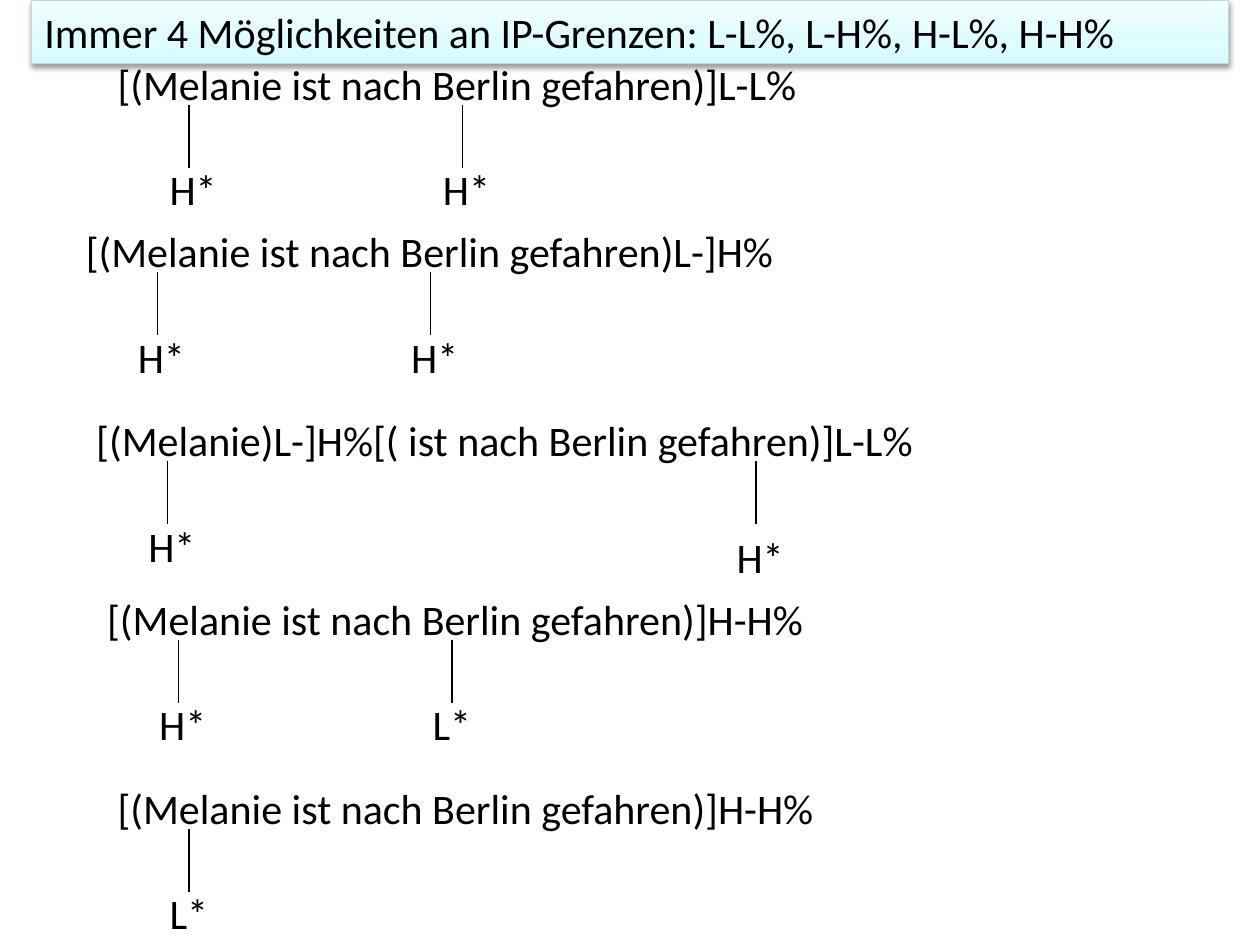
"""Build a slide on the boundary tones of German intonation phrases."""
from copy import deepcopy
from dataclasses import dataclass

from lxml import etree
from pptx import Presentation
from pptx.dml.color import RGBColor
from pptx.enum.shapes import MSO_CONNECTOR
from pptx.enum.text import MSO_ANCHOR, MSO_AUTO_SIZE, PP_ALIGN
from pptx.oxml import parse_xml
from pptx.oxml.ns import nsdecls, qn
from pptx.util import Cm, Pt

STRAIGHT = MSO_CONNECTOR.STRAIGHT
TOP = MSO_ANCHOR.TOP
GROW = MSO_AUTO_SIZE.SHAPE_TO_FIT_TEXT
FIXED = MSO_AUTO_SIZE.NONE
LEFT = PP_ALIGN.LEFT


@dataclass(frozen=True)
class Theme:
    font: str = "Calibri"
    size: Pt = Pt(24)
    line_width: Pt = Pt(0.75)
    ink: RGBColor = RGBColor.from_string("000000")
    title_border: RGBColor = RGBColor.from_string("B6DCDF")
    title_stops: tuple = ((0, "D3FBFF"), (0.35, "DFFCFF"), (1, "F2FEFF"))


theme = Theme()


def write_text(shape, text, *, wrap=True, fit=GROW, size=theme.size, color=theme.ink):
    frame = shape.text_frame
    frame.word_wrap = wrap
    frame.auto_size = fit
    frame.vertical_anchor = TOP
    paragraph = frame.paragraphs[0]
    paragraph.alignment = LEFT
    run = paragraph.add_run()
    run.text = text
    run.font.name = theme.font
    run.font.size = size
    run.font.color.rgb = color


presentation = Presentation()
presentation.slide_width = Cm(25.4)
presentation.slide_height = Cm(19.05)
slide = presentation.slides.add_slide(presentation.slide_layouts[5])

title = slide.shapes.title
title.left, title.top, title.width, title.height = Cm(0.64), Cm(0), Cm(24.13), Cm(1.28)
write_text(title, "Immer 4 Möglichkeiten an IP-Grenzen: L-L%, L-H%, H-L%, H-H%", fit=FIXED)
title.fill.gradient()
title.fill.gradient_angle = 90
title_properties = title._element.spPr
stop_list = title_properties.find(".//" + qn("a:gsLst"))
stop_list.insert(1, deepcopy(stop_list[0]))
for stop, (position, color) in zip(title.fill.gradient_stops, theme.title_stops):
    stop.position = position
    stop.color.rgb = RGBColor.from_string(color)
title.line.color.rgb = theme.title_border
title.line.width = theme.line_width
title_properties.append(parse_xml(
    f'<a:effectLst {nsdecls("a")}><a:outerShdw blurRad="{Pt(3.1)}" dist="{Pt(1.6)}" '
    f'dir="5400000" rotWithShape="0"><a:srgbClr val="{theme.ink}">'
    '<a:alpha val="38000"/></a:srgbClr></a:outerShdw></a:effectLst>'))

FIRST_ACCENT, SECOND_ACCENT, LATE_ACCENT = 1.69, 7.2, 13.55
STEM_TOP, STEM_LENGTH = 1.06, 1.27
TONE_SHIFT, TONE_TOP, LOW_TONE_TOP = 0.64, 2.12, 2.34
TONE_WIDTHS = {"H*": 1.48, "L*": 1.3}

phrases = [
    (2.12, 1.05, "[(Melanie ist nach Berlin gefahren)]L-L%",
     [("H*", FIRST_ACCENT, TONE_TOP), ("H*", SECOND_ACCENT, TONE_TOP)]),
    (1.48, 4.43, "[(Melanie ist nach Berlin gefahren)L-]H%",
     [("H*", FIRST_ACCENT, TONE_TOP), ("H*", SECOND_ACCENT, TONE_TOP)]),
    (1.69, 8.24, "[(Melanie)L-]H%[( ist nach Berlin gefahren)]L-L%",
     [("H*", FIRST_ACCENT, TONE_TOP), ("H*", LATE_ACCENT, LOW_TONE_TOP)]),
    (1.91, 11.84, "[(Melanie ist nach Berlin gefahren)]H-H%",
     [("H*", FIRST_ACCENT, TONE_TOP), ("L*", SECOND_ACCENT, TONE_TOP)]),
    (2.12, 15.65, "[(Melanie ist nach Berlin gefahren)]H-H%",
     [("L*", FIRST_ACCENT, TONE_TOP)]),
]

for left, top, sentence, accents in phrases:
    group = slide.shapes.add_group_shape()
    sentence_box = group.shapes.add_textbox(Cm(left), Cm(top), Cm(21.17), Cm(1.28))
    write_text(sentence_box, sentence)
    for tone, offset, tone_top in accents:
        stem_left, stem_top = left + offset, top + STEM_TOP
        stem = group.shapes.add_connector(
            STRAIGHT, Cm(stem_left), Cm(stem_top),
            Cm(stem_left), Cm(stem_top + STEM_LENGTH))
        stem.line.color.rgb = theme.ink
        stem.line.width = theme.line_width
        etree.SubElement(stem._element.spPr, qn("a:effectLst"))
        tone_box = group.shapes.add_textbox(
            Cm(stem_left - TONE_SHIFT), Cm(top + tone_top),
            Cm(TONE_WIDTHS[tone]), Cm(1.28))
        write_text(tone_box, tone, wrap=False)

presentation.save("out.pptx")
